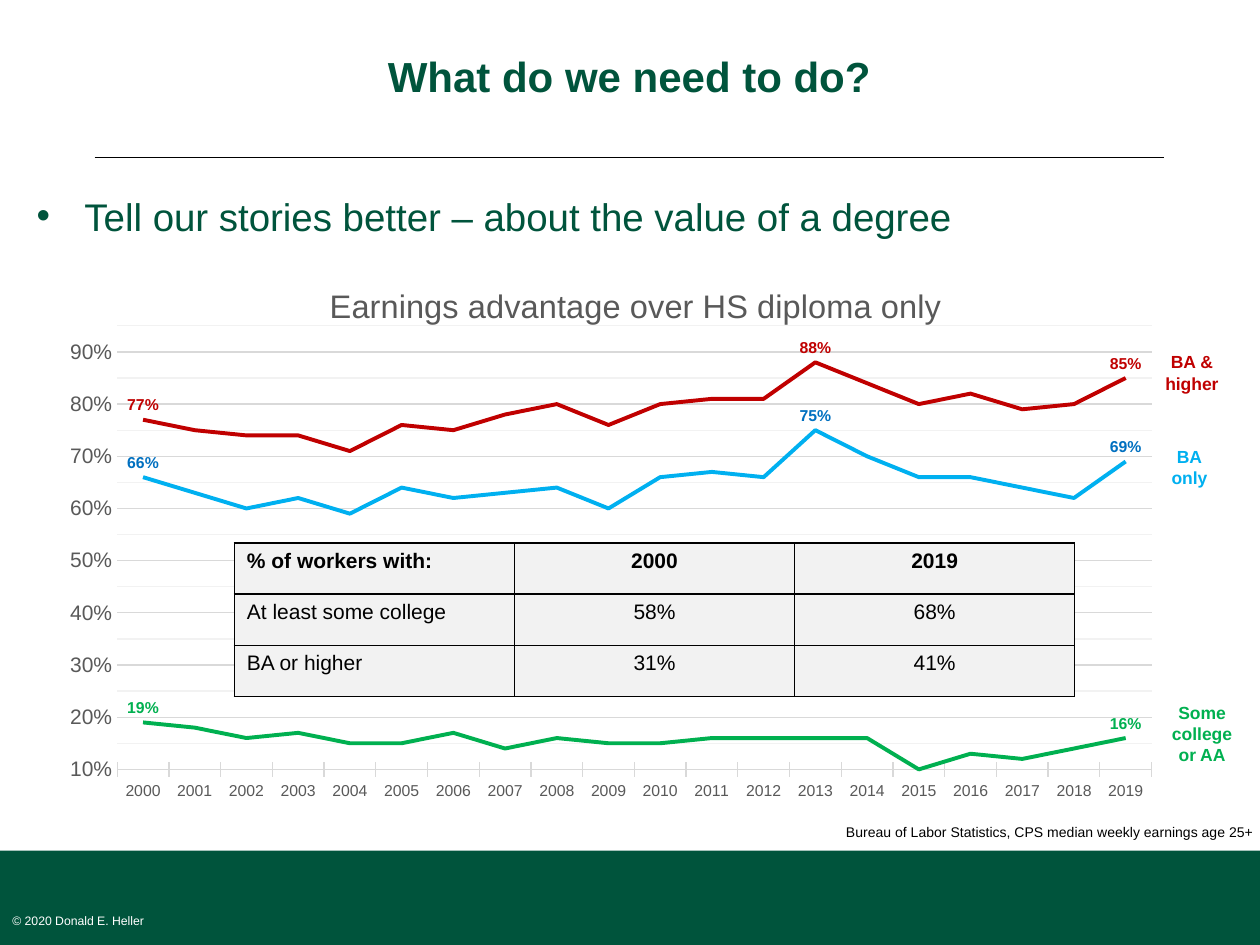
from lxml import etree
from pptx import Presentation
from pptx.chart.data import CategoryChartData
from pptx.dml.color import RGBColor
from pptx.enum.chart import XL_CHART_TYPE as ChartType, XL_LABEL_POSITION as LabelPos
from pptx.enum.chart import XL_TICK_MARK as Tick
from pptx.enum.shapes import MSO_CONNECTOR as Connector, MSO_SHAPE as Shape
from pptx.enum.text import MSO_ANCHOR as Anchor, PP_ALIGN as Align
from pptx.oxml import parse_xml
from pptx.oxml.ns import nsdecls, qn
from pptx.util import Inches, Pt

GREEN, GRAY, GRID = "00543C", "595959", "D9D9D9"
COLLEGE, BACHELOR, HIGHER = "00B050", "00B0F0", "C00000"

# name, line colour, label colour, labelled points, values
SERIES = [
    ("Some college or AA", COLLEGE, COLLEGE, (0, 19),
     [.19, .18, .16, .17, .15, .15, .17, .14, .16, .15,
      .15, .16, .16, .16, .16, .10, .13, .12, .14, .16]),
    ("BA only", BACHELOR, "0070C0", (0, 13, 19),
     [.66, .63, .60, .62, .59, .64, .62, .63, .64, .60,
      .66, .67, .66, .75, .70, .66, .66, .64, .62, .69]),
    ("BA & higher", HIGHER, HIGHER, (0, 13, 19),
     [.77, .75, .74, .74, .71, .76, .75, .78, .80, .76,
      .80, .81, .81, .88, .84, .80, .82, .79, .80, .85]),
]
WORKERS = [
    ("% of workers with:", "2000", "2019"),
    ("At least some college", "58%", "68%"),
    ("BA or higher", "31%", "41%"),
]


def rgb(value):
    return RGBColor.from_string(value)


def set_font(font, size, color, bold=False):
    font.name, font.size, font.bold = "Arial", Pt(size), bold
    font.color.rgb = rgb(color)


def set_line(line, color, width):
    line.color.rgb = rgb(color)
    line.width = Pt(width)


def place(shape, left, top, width, height):
    shape.left, shape.top = Inches(left), Inches(top)
    shape.width, shape.height = Inches(width), Inches(height)


def clear_margins(frame):
    frame.margin_left = frame.margin_right = 0
    frame.margin_top = frame.margin_bottom = 0


def add_text(page, box, lines, size, color, align=Align.LEFT, bold=False, wrap=True):
    frame = page.shapes.add_textbox(*map(Inches, box)).text_frame
    frame.word_wrap = wrap
    frame.text = "\n".join(lines)
    for para in frame.paragraphs:
        para.alignment = align
        set_font(para.font, size, color, bold)


def add_footer(page, left, top, width, height):
    band = page.shapes.add_shape(
        Shape.RECTANGLE, Inches(left), Inches(top), Inches(width), Inches(height))
    band.shadow.inherit = False
    band.fill.solid()
    band.fill.fore_color.rgb = rgb(GREEN)
    band.line.fill.background()
    add_text(page, (left, top + 0.45, 2.05, 0.22), ["© 2020 Donald E. Heller"], 7, "FFFFFF")


def add_title(page, left, top, width, height):
    """Place the title and the rule below it."""
    title = page.shapes.title
    place(title, left, top, width, height)
    frame = title.text_frame
    clear_margins(frame)
    frame.vertical_anchor = Anchor.MIDDLE
    frame.text = "What do we need to do?"
    para = frame.paragraphs[0]
    para.alignment, para.line_spacing = Align.CENTER, Pt(30)
    set_font(para.font, 24, GREEN, True)

    rule_top = Inches(top + 1.12)
    rule = page.shapes.add_connector(
        Connector.STRAIGHT, Inches(left), rule_top, Inches(left + width), rule_top)
    set_line(rule.line, "000000", 0.5)
    etree.SubElement(rule._element.spPr, qn("a:effectLst"))


def add_body(page, left, top, width, height):
    body = page.placeholders[1]
    place(body, left, top, width, height)
    frame = body.text_frame
    clear_margins(frame)
    frame.text = "Tell our stories better – about the value of a degree"
    para = frame.paragraphs[0]
    properties = para._p.get_or_add_pPr()
    properties.set("marL", str(Inches(0.38)))
    properties.set("indent", str(Inches(-0.38)))
    etree.SubElement(properties, qn("a:buChar"), char="•")
    para.line_spacing = Pt(32)
    set_font(para.font, 22, GREEN)


def layout_xml(target="", **fractions):
    """Manual chart layout; fractions are x, y, w and h of the chart space."""
    modes = "".join(f'<c:{key}Mode val="edge"/>' for key in fractions if key in "xy")
    sizes = "".join(f'<c:{key} val="{value}"/>' for key, value in fractions.items())
    return parse_xml(f'<c:layout {nsdecls("c")}><c:manualLayout>{target}{modes}{sizes}'
                     '</c:manualLayout></c:layout>')


def set_layout(parent, layout, after=None):
    for old in parent.findall(qn("c:layout")):
        parent.remove(old)
    if after is None:
        parent.insert(0, layout)
    else:
        after.addnext(layout)


def add_minor_gridlines(axis, color, width):
    axis._element.find(qn("c:majorGridlines")).addnext(parse_xml(
        f'<c:minorGridlines {nsdecls("c", "a")}><c:spPr><a:ln w="{Pt(width)}"><a:solidFill>'
        f'<a:srgbClr val="{color}"/></a:solidFill></a:ln></c:spPr></c:minorGridlines>'))


def format_axes(chart):
    years, shares = chart.category_axis, chart.value_axis
    years.major_tick_mark = Tick.CROSS
    set_font(years.tick_labels.font, 9, GRAY)
    set_line(years.format.line, GRID, 0.75)

    shares.minimum_scale, shares.maximum_scale = 0.1, 0.95
    shares.major_unit, shares.minor_unit = 0.1, 0.05
    shares.major_tick_mark = Tick.NONE
    shares.has_major_gridlines = True
    set_line(shares.major_gridlines.format.line, GRID, 0.75)
    add_minor_gridlines(shares, "F2F2F2", 0.75)
    shares.format.line.fill.background()
    set_font(shares.tick_labels.font, 12, GRAY)
    shares.tick_labels.number_format = "0%"
    shares.tick_labels.number_format_is_linked = False


def add_earnings_chart(page, left, top, width, height):
    data = CategoryChartData(number_format="0%")
    data.categories = [str(year) for year in range(2000, 2020)]
    for name, _, _, _, values in SERIES:
        data.add_series(name, values)
    chart = page.shapes.add_chart(
        ChartType.LINE, Inches(left), Inches(top), Inches(width), Inches(height), data).chart
    set_font(chart.font, 10, "000000")
    chart.has_legend = False
    chart.plots[0].vary_by_categories = False

    chart.has_title = True
    heading = chart.chart_title
    heading.text_frame.text = "Earnings advantage over HS diploma only"
    set_font(heading.text_frame.paragraphs[0].font, 18.6, GRAY)
    title_xml = heading._element
    set_layout(title_xml, layout_xml(x=0.257, y=0.048), title_xml.find(qn("c:tx")))
    plot_area = chart._chartSpace.chart.plotArea
    set_layout(plot_area, layout_xml('<c:layoutTarget val="inner"/>',
                                     x=0.093, y=0.132, w=0.821, h=0.793))
    format_axes(chart)

    for series, (_, color, label_color, labelled, _) in zip(chart.plots[0].series, SERIES):
        series.smooth = False
        set_line(series.format.line, color, 2.25)
        for index in labelled:
            label = series.points[index].data_label
            set_font(label.font, 9, label_color, True)
            label.position = LabelPos.ABOVE


def add_series_names(page):
    names = [
        (8.96, 2.74, HIGHER, ["BA &", "higher"]),
        (8.94, 3.49, BACHELOR, ["BA", "only"]),
        (9.04, 5.52, COLLEGE, ["Some", "college", "or AA"]),
    ]
    for left, top, color, lines in names:
        add_text(page, (left, top, 1, 0.45), lines, 10, color, Align.CENTER, True)


def add_borders(cell):
    properties = cell._tc.get_or_add_tcPr()
    for side in "LRTB":
        properties.append(parse_xml(
            f'<a:ln{side} {nsdecls("a")} w="{Pt(1)}"><a:solidFill>'
            f'<a:srgbClr val="000000"/></a:solidFill></a:ln{side}>'))


def add_workers_table(page, left, top, width, height):
    table = page.shapes.add_table(
        len(WORKERS), len(WORKERS[0]),
        Inches(left), Inches(top), Inches(width), Inches(height)).table
    table.first_row = table.horz_banding = False
    for row, texts in enumerate(WORKERS):
        for column, text in enumerate(texts):
            cell = table.cell(row, column)
            add_borders(cell)
            cell.fill.solid()
            cell.fill.fore_color.rgb = rgb("F2F2F2")
            cell.text = text
            para = cell.text_frame.paragraphs[0]
            para.alignment = Align.CENTER if column else Align.LEFT
            set_font(para.font, 12, "000000", row == 0)


def main():
    deck = Presentation()
    deck.slide_width, deck.slide_height = Inches(10), Inches(7.5)
    page = deck.slides.add_slide(deck.slide_layouts[1])
    add_footer(page, 0, 6.75, 10, 0.75)
    add_title(page, 0.75, 0.13, 8.49, 0.93)
    add_body(page, 0.29, 1.45, 9.47, 5.2)
    add_earnings_chart(page, 0, 2, 10, 4.44)
    add_series_names(page)
    add_text(page, (6.58, 6.49, 3.47, 0.24),
             ["Bureau of Labor Statistics, CPS median weekly earnings age 25+"],
             8, "000000", Align.RIGHT, wrap=False)
    add_workers_table(page, 1.86, 4.31, 6.67, 1.22)
    deck.save("out.pptx")


if __name__ == "__main__":
    main()
